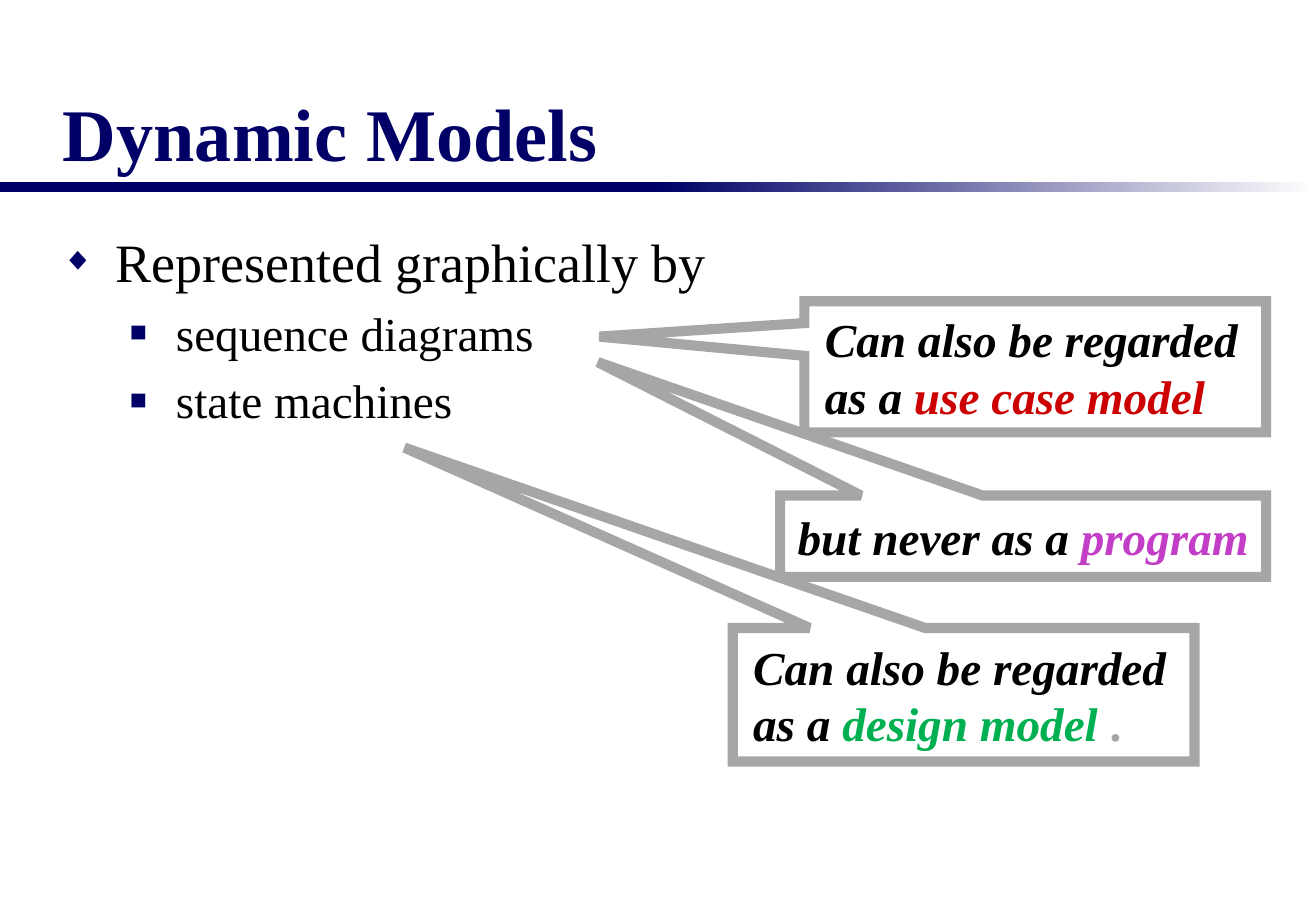
from dataclasses import dataclass

from lxml.etree import SubElement
from pptx import Presentation
from pptx.dml.color import RGBColor
from pptx.enum.dml import MSO_THEME_COLOR
from pptx.enum.shapes import MSO_SHAPE
from pptx.enum.text import MSO_ANCHOR, PP_ALIGN
from pptx.oxml.ns import qn
from pptx.shapes.autoshape import Shape
from pptx.slide import Slide
from pptx.text.text import TextFrame, _Paragraph
from pptx.util import Inches, Pt

NAVY = RGBColor(0x00, 0x00, 0x66)
BLACK = RGBColor(0x00, 0x00, 0x00)
WHITE = RGBColor(0xFF, 0xFF, 0xFF)
GREY = RGBColor(0xA6, 0xA6, 0xA6)
RED = RGBColor(0xCC, 0x00, 0x00)
PURPLE = RGBColor(0xC3, 0x3E, 0xC6)
GREEN = RGBColor(0x00, 0xB0, 0x50)
FONT = "Times New Roman"
SLIDE_WIDTH, SLIDE_HEIGHT = 10.83, 7.5

Box = tuple[float, float, float, float]


@dataclass(frozen=True)
class Bullet:
    text: str
    symbol: str
    size: int
    level: int
    margin: float
    hanging: float


@dataclass(frozen=True)
class Callout:
    box: Box
    tip: tuple[float, float]
    lead: str
    model: str
    color: RGBColor
    ending: str = ""
    centered: bool = False
    filled: bool = False


BULLETS = [
    Bullet("Represented graphically by", "◆", 32, 0, 0.44, 0.44),
    Bullet("sequence diagrams", "■", 28, 1, 0.94, 0.38),
    Bullet("state machines", "■", 28, 1, 0.94, 0.38),
]

CALLOUTS = [
    Callout((6.62, 2.48, 3.8, 1.08), (-0.944, -0.23),
            "Can also be regarded as a ", "use case model", RED),
    Callout((6.42, 4.08, 4, 0.67), (-0.875, -2.139),
            "but never as a ", "program", PURPLE, centered=True),
    Callout((6.03, 5.17, 3.8, 1.1), (-1.211, -1.85),
            "Can also be regarded as a ", "design model ", GREEN, ending=".", filled=True),
]


def style_paragraph(paragraph: _Paragraph, size: int, color: RGBColor) -> None:
    paragraph.font.name = FONT
    paragraph.font.size = Pt(size)
    paragraph.font.color.rgb = color


def add_shape(slide: Slide, kind: MSO_SHAPE, box: Box) -> Shape:
    shape = slide.shapes.add_shape(kind, *map(Inches, box))
    shape.shadow.inherit = False
    return shape


def add_text_frame(slide: Slide, box: Box) -> TextFrame:
    frame = slide.shapes.add_textbox(*map(Inches, box)).text_frame
    frame.word_wrap = True
    return frame


def add_title_rule(slide: Slide) -> None:
    """Draw the bar under the title, solid on the left and fading on the right."""
    half = SLIDE_WIDTH / 2
    solid, fading = (add_shape(slide, MSO_SHAPE.RECTANGLE, (left, 1.5, half, 0.08))
                     for left in (0, half))
    for bar in (solid, fading):
        bar.line.fill.background()
    solid.fill.solid()
    solid.fill.fore_color.rgb = NAVY
    fading.fill.gradient()
    fading.fill.gradient_angle = 0
    for stop, color, position in zip(fading.fill.gradient_stops, (NAVY, WHITE), (0, 1)):
        stop.color.theme_color = MSO_THEME_COLOR.ACCENT_1
        stop.color.rgb = color
        stop.position = position


def add_title(slide: Slide, text: str) -> None:
    frame = add_text_frame(slide, (0.42, 0.29, 10, 1.21))
    frame.vertical_anchor = MSO_ANCHOR.BOTTOM
    paragraph = frame.paragraphs[0]
    paragraph.text = text
    style_paragraph(paragraph, 44, NAVY)
    paragraph.font.bold = True


def format_bullet(paragraph: _Paragraph, bullet: Bullet) -> None:
    properties = paragraph._p.get_or_add_pPr()
    properties.set("marL", str(Inches(bullet.margin)))
    properties.set("indent", str(-Inches(bullet.hanging)))
    color = SubElement(properties, qn("a:buClr"))
    SubElement(color, qn("a:srgbClr"), val=str(NAVY))
    SubElement(properties, qn("a:buSzPct"), val="60000")
    SubElement(properties, qn("a:buFont"), typeface=FONT)
    SubElement(properties, qn("a:buChar"), char=bullet.symbol)


def add_bullets(slide: Slide, bullets: list[Bullet]) -> None:
    frame = add_text_frame(slide, (0.41, 1.83, 10, 1.75))
    for index, bullet in enumerate(bullets):
        paragraph = frame.add_paragraph() if index else frame.paragraphs[0]
        paragraph.text = bullet.text
        paragraph.level = bullet.level
        paragraph.space_before = Pt(round(bullet.size * 0.23, 1))
        format_bullet(paragraph, bullet)
        style_paragraph(paragraph, bullet.size, BLACK)


def add_callout(slide: Slide, callout: Callout) -> None:
    shape = add_shape(slide, MSO_SHAPE.RECTANGULAR_CALLOUT, callout.box)
    for index, offset in enumerate(callout.tip):
        shape.adjustments[index] = offset
    if callout.filled:
        shape.fill.solid()
        shape.fill.fore_color.rgb = WHITE
    else:
        shape.fill.background()
    shape.line.color.rgb = GREY
    shape.line.width = Pt(6)
    SubElement(shape.line._ln, qn("a:miter"), lim="800000")

    frame = shape.text_frame
    frame.word_wrap = True
    frame.vertical_anchor = MSO_ANCHOR.MIDDLE
    paragraph = frame.paragraphs[0]
    paragraph.alignment = PP_ALIGN.CENTER if callout.centered else PP_ALIGN.LEFT
    if not callout.centered:
        paragraph._p.get_or_add_pPr().set("marL", str(Inches(0.07)))
    style_paragraph(paragraph, 28, BLACK)
    paragraph.font.bold = True
    paragraph.font.italic = True
    paragraph.add_run().text = callout.lead
    model = paragraph.add_run()
    model.text = callout.model
    model.font.color.rgb = callout.color
    if callout.ending:
        ending = paragraph.add_run()
        ending.text = callout.ending
        ending.font.italic = False
        ending.font.color.rgb = GREY


def main() -> None:
    presentation = Presentation()
    presentation.slide_width = Inches(SLIDE_WIDTH)
    presentation.slide_height = Inches(SLIDE_HEIGHT)
    slide = presentation.slides.add_slide(presentation.slide_layouts[6])
    add_title_rule(slide)
    add_bullets(slide, BULLETS)
    add_title(slide, "Dynamic Models")
    for callout in CALLOUTS:
        add_callout(slide, callout)
    presentation.save("out.pptx")


if __name__ == "__main__":
    main()
